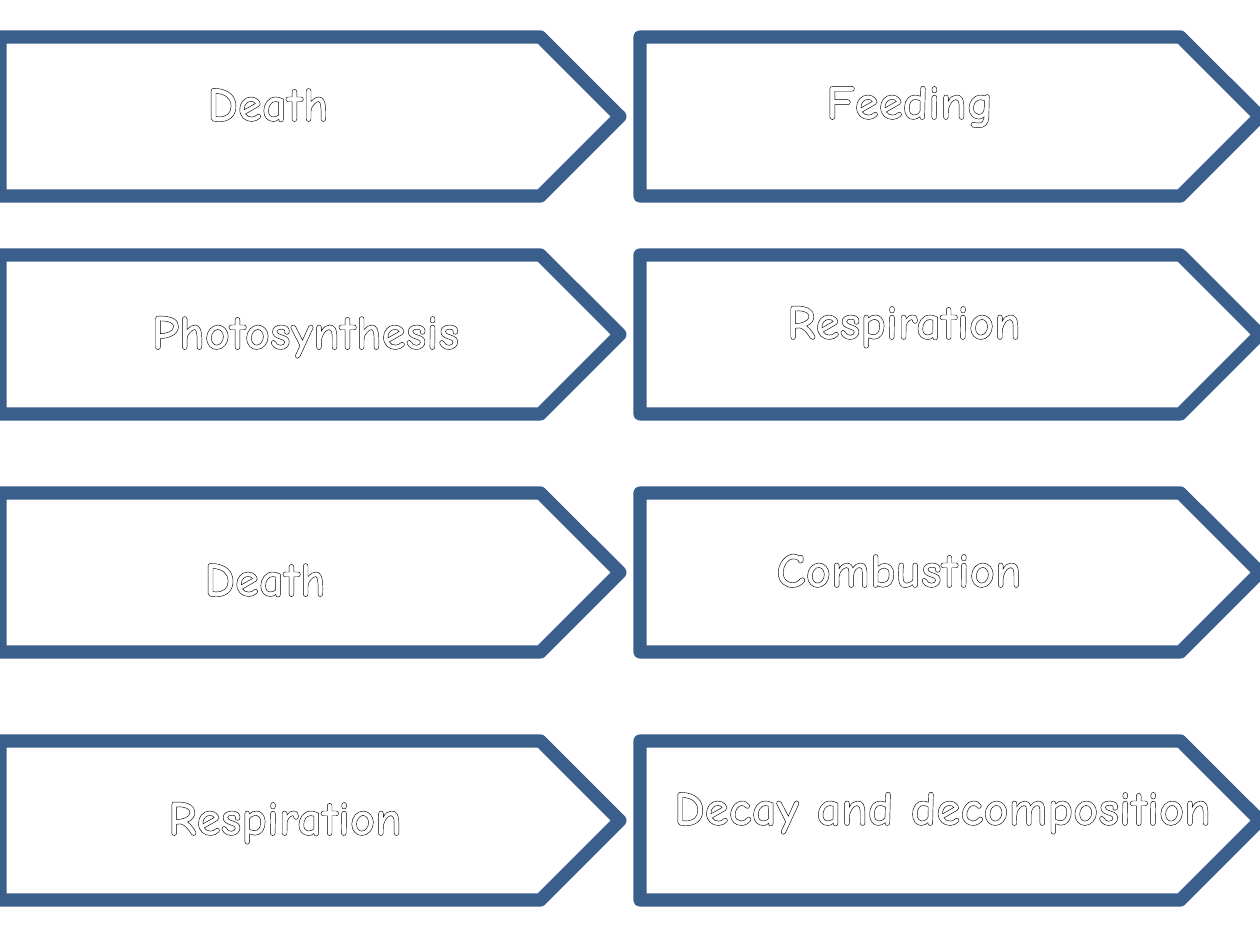
from pptx import Presentation
from pptx import util as u
from pptx.dml.color import RGBColor
from pptx.enum import shapes, text
from pptx.oxml import parse_xml
from pptx.oxml.ns import nsdecls

PX = 914400 / 126
BLUE = RGBColor(0x3A, 0x5F, 0x8C)
WHITE = RGBColor(0xFF, 0xFF, 0xFF)
BLACK = RGBColor(0x00, 0x00, 0x00)

ARROW_LEFTS = (0, 640)
ARROW_TOPS = (37, 255, 493, 741)
ARROW_SIZE = (620, 159)
LABEL_HEIGHT = 72
LABELS = (
    ("Death", 164, 66, 208),
    ("Photosynthesis", 117, 294, 377),
    ("Death", 161, 541, 208),
    ("Respiration", 126, 780, 318),
    ("Respiration", 745, 284, 318),
    ("Combustion", 740, 532, 318),
    ("Feeding", 751, 64, 318),
    ("Decay and decomposition", 591, 770, 703),
)


def scaled(*lengths):
    """Turn px lengths into EMU."""
    return [u.Emu(round(length * PX)) for length in lengths]


def outline_text(span, color, width):
    """Draw a line around the letters of a run."""
    line = parse_xml(
        f'<a:ln {nsdecls("a")} w="{u.Pt(width)}">'
        f'<a:solidFill><a:srgbClr val="{color}"/></a:solidFill></a:ln>'
    )
    span.font._element.insert(0, line)


def write(para, words, *, font="Comic Neue", size=28, color=WHITE,
          bold=True, outline=BLACK, outline_width=1.4):
    """Add a centred, outlined run to a paragraph."""
    para.alignment = text.PP_ALIGN.CENTER
    span = para.add_run()
    span.text = words
    span.font.name = font
    span.font.size = u.Pt(size)
    span.font.bold = bold
    span.font.color.rgb = color
    outline_text(span, outline, outline_width)


def add_label(page, words, left, top, width):
    """Add the name of one process."""
    box = page.shapes.add_textbox(*scaled(left, top, width, LABEL_HEIGHT))
    frame = box.text_frame
    frame.word_wrap = True
    frame.auto_size = text.MSO_AUTO_SIZE.SHAPE_TO_FIT_TEXT
    write(frame.paragraphs[0], words)


def add_arrow(page, left, top):
    """Add one unfilled pentagon arrow."""
    arrow = page.shapes.add_shape(
        shapes.MSO_SHAPE.PENTAGON, *scaled(left, top, *ARROW_SIZE)
    )
    arrow.shadow.inherit = False
    arrow.fill.background()
    arrow.line.color.rgb = BLUE
    arrow.line.width = u.Pt(7.5)


def main():
    """Build the slide of process arrows."""
    deck = Presentation()
    deck.slide_width, deck.slide_height = scaled(1260, 945)
    page = deck.slides.add_slide(deck.slide_layouts[6])
    for label in LABELS:
        add_label(page, *label)
    for left in ARROW_LEFTS:
        for top in ARROW_TOPS:
            add_arrow(page, left, top)
    deck.save("out.pptx")


if __name__ == "__main__":
    main()
